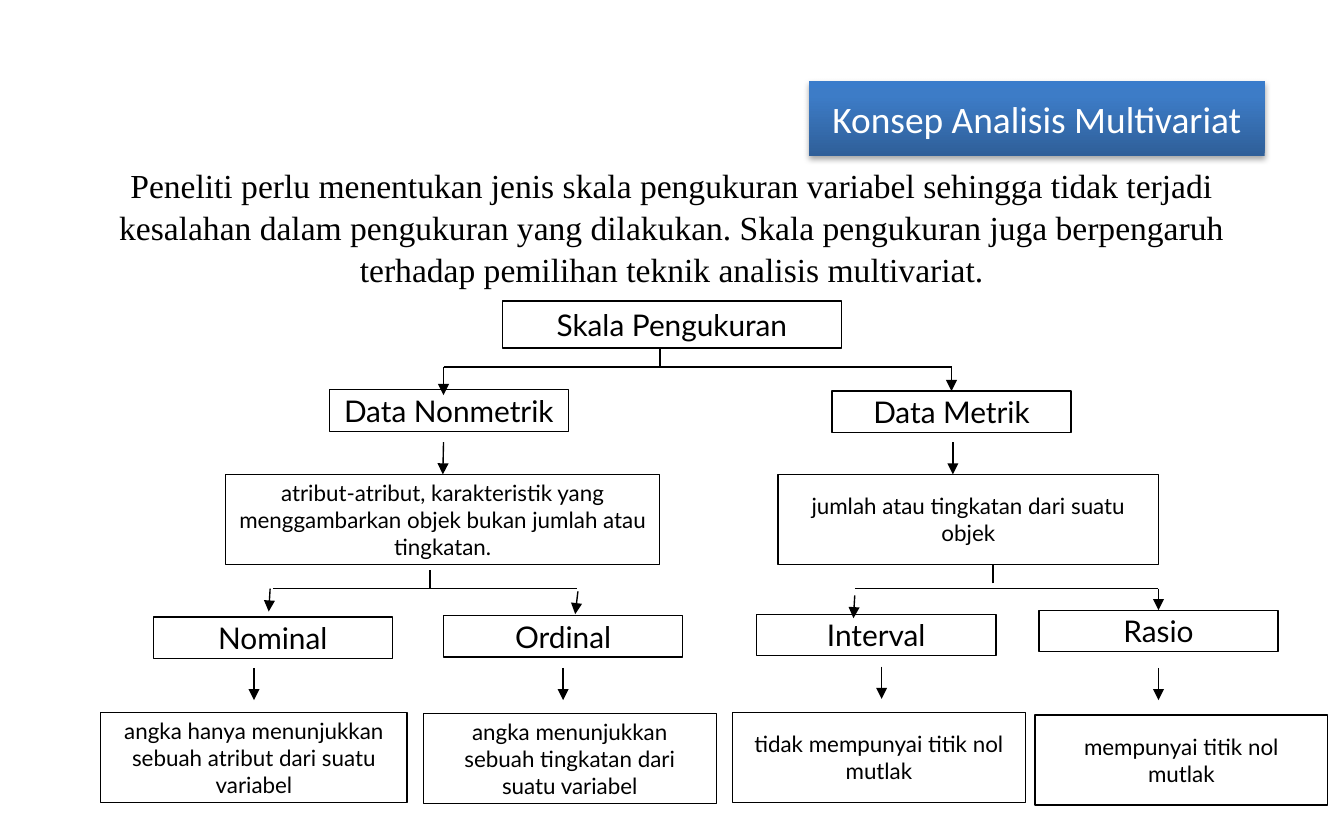
from pptx import Presentation
from pptx.dml.color import RGBColor
from pptx.enum.shapes import MSO_CONNECTOR, MSO_SHAPE
from pptx.enum.text import MSO_ANCHOR, PP_ALIGN
from pptx.oxml import parse_xml
from pptx.oxml.ns import nsdecls, qn
from pptx.util import Inches, Pt
from lxml import etree

RECTANGLE = MSO_SHAPE.RECTANGLE
STRAIGHT = MSO_CONNECTOR.STRAIGHT
CENTER = PP_ALIGN.CENTER
MIDDLE = MSO_ANCHOR.MIDDLE
TOP_SIDE = 0

COLORS = {
    "ink": "000000",
    "paper": "FFFFFF",
    "banner_dark": "2F5F99",
    "banner_mid": "3D7CC7",
    "banner_light": "3A7CCB",
}
FONTS = {"intro": "Times New Roman", "banner": "Calibri", "box": "Lato"}


class ScaleSlide:
    """Holds the slide being drawn and the style of its elements."""

    def __init__(self, page):
        self.page = page
        self.line_width = Pt(0.75)

    def color(self, name):
        return RGBColor.from_string(COLORS[name])

    def set_text(self, shape, text, size, font, color="ink"):
        frame = shape.text_frame
        frame.word_wrap = True
        frame.text = text
        para = frame.paragraphs[0]
        para.alignment = CENTER
        span = para.runs[0]
        span.font.size = Pt(size)
        span.font.name = FONTS[font]
        span.font.color.rgb = self.color(color)
        return para

    def intro(self, left, top, width, height, text):
        box = self.page.shapes.add_textbox(*map(Inches, (left, top, width, height)))
        self.set_text(box, text, 18, "intro").line_spacing = 1.05

    def rectangle(self, left, top, width, height):
        shape = self.page.shapes.add_shape(
            RECTANGLE, *map(Inches, (left, top, width, height)))
        shape.text_frame.vertical_anchor = MIDDLE
        return shape

    def box(self, left, top, width, height, text, size):
        shape = self.rectangle(left, top, width, height)
        shape.shadow.inherit = False
        shape.fill.solid()
        shape.fill.fore_color.rgb = self.color("paper")
        shape.line.color.rgb = self.color("ink")
        shape.line.width = self.line_width
        self.set_text(shape, text, size, "box")
        return shape

    def heading(self, left, top, text, width=1.78, height=0.31):
        return self.box(left, top, width, height, text, 16)

    def detail(self, left, top, width, text):
        return self.box(left, top, width, 0.67, text, 12)

    def banner(self, left, top, width, height, text):
        """Draw the title bar with a three-stop gradient and a soft shadow."""
        shape = self.rectangle(left, top, width, height)
        shape.line.fill.background()
        stops = ((0, "banner_dark"), (80, "banner_mid"), (100, "banner_light"))
        stop_xml = "".join(
            f'<a:gs pos="{position * 1000}"><a:srgbClr val="{COLORS[name]}"/></a:gs>'
            for position, name in stops)
        gradient = parse_xml(
            f'<a:gradFill {nsdecls("a")} rotWithShape="1"><a:gsLst>{stop_xml}</a:gsLst>'
            '<a:lin ang="16200000" scaled="0"/></a:gradFill>')
        shadow = parse_xml(
            f'<a:effectLst {nsdecls("a")}><a:outerShdw blurRad="{Pt(3.1)}" '
            f'dist="{Pt(1.8)}" dir="5400000" rotWithShape="0">'
            f'<a:srgbClr val="{COLORS["ink"]}"><a:alpha val="35000"/></a:srgbClr>'
            '</a:outerShdw></a:effectLst>')
        properties = shape.element.spPr
        properties.find(qn("a:prstGeom")).addnext(gradient)
        properties.append(shadow)
        self.set_text(shape, text, 20, "banner", "paper")

    def line(self, start, end, arrow=False, end_box=None):
        link = self.page.shapes.add_connector(STRAIGHT, *map(Inches, (*start, *end)))
        link.line.color.rgb = self.color("ink")
        link.line.width = self.line_width
        properties = link.element.spPr
        if arrow:
            etree.SubElement(properties.find(qn("a:ln")), qn("a:tailEnd"), type="triangle")
        etree.SubElement(properties, qn("a:effectLst"))
        if end_box is not None:
            link.end_connect(end_box, TOP_SIDE)

    def arrow_down(self, x, top, length=0.24, end_box=None):
        self.line((x, top), (x, top + length), True, end_box)

    def slanted_arrow(self, x, top, shift=0.01, end_box=None):
        self.line((x, top), (x - shift, top + 0.17), True, end_box)


def main():
    deck = Presentation()
    deck.slide_width, deck.slide_height = Inches(10), Inches(6.25)
    diagram = ScaleSlide(deck.slides.add_slide(deck.slide_layouts[6]))

    diagram.intro(0.5, 1.16, 9, 1.05,
                  "Peneliti perlu menentukan jenis skala pengukuran variabel sehingga "
                  "tidak terjadi kesalahan dalam pengukuran yang dilakukan. Skala "
                  "pengukuran juga berpengaruh terhadap pemilihan teknik analisis "
                  "multivariat.")
    diagram.banner(6.02, 0.6, 3.39, 0.56, "Konsep Analisis Multivariat")

    # Boxes, level by level
    diagram.heading(3.74, 2.24, "Skala Pengukuran", 2.52, 0.35)
    diagram.heading(2.45, 2.9, "Data Nonmetrik")
    metric = diagram.heading(6.19, 2.91, "Data Metrik")
    nonmetric_detail = diagram.detail(
        1.68, 3.53, 3.23,
        "atribut-atribut, karakteristik yang menggambarkan objek bukan jumlah "
        "atau tingkatan.")
    diagram.detail(5.79, 3.53, 2.83, "jumlah atau tingkatan dari suatu objek")
    diagram.heading(1.14, 4.59, "Nominal")
    diagram.heading(3.3, 4.58, "Ordinal")
    diagram.heading(5.63, 4.57, "Interval")
    ratio = diagram.heading(7.73, 4.54, "Rasio")
    for left, top, width, text in (
        (0.75, 5.3, 2.28, "angka hanya menunjukkan sebuah atribut dari suatu variabel"),
        (3.15, 5.31, 2.18, "angka menunjukkan sebuah tingkatan dari suatu variabel"),
        (5.45, 5.3, 2.18, "tidak mempunyai titik nol mutlak"),
        (7.7, 5.32, 2.18, "mempunyai titik nol mutlak"),
    ):
        diagram.detail(left, top, width, text)

    # Branch bars and the stems that feed them
    for left, right, y in ((3.3, 7.08, 2.73), (2.03, 4.29, 4.38), (6.36, 8.62, 4.38)):
        diagram.line((left, y), (right, y))
    for x, bottom in ((4.91, 2.73), (3.2, 4.38), (7.39, 4.34)):
        diagram.line((x, bottom), (x, bottom - 0.14))

    # Arrows into the two data types and their descriptions
    diagram.arrow_down(3.3, 2.73, 0.21)
    diagram.arrow_down(7.08, 2.73, 0.17, metric)
    diagram.arrow_down(3.3, 3.29, end_box=nonmetric_detail)
    diagram.arrow_down(7.09, 3.29)

    # Arrows into the four scales and their descriptions
    diagram.slanted_arrow(2.01, 4.38)
    diagram.slanted_arrow(4.3, 4.4, 0.02)
    diagram.slanted_arrow(6.36, 4.43)
    diagram.slanted_arrow(8.62, 4.38, end_box=ratio)
    for x, top in ((1.89, 4.97), (4.19, 4.97), (6.56, 4.96), (8.62, 4.97)):
        diagram.arrow_down(x, top)

    deck.save("out.pptx")


if __name__ == "__main__":
    main()
